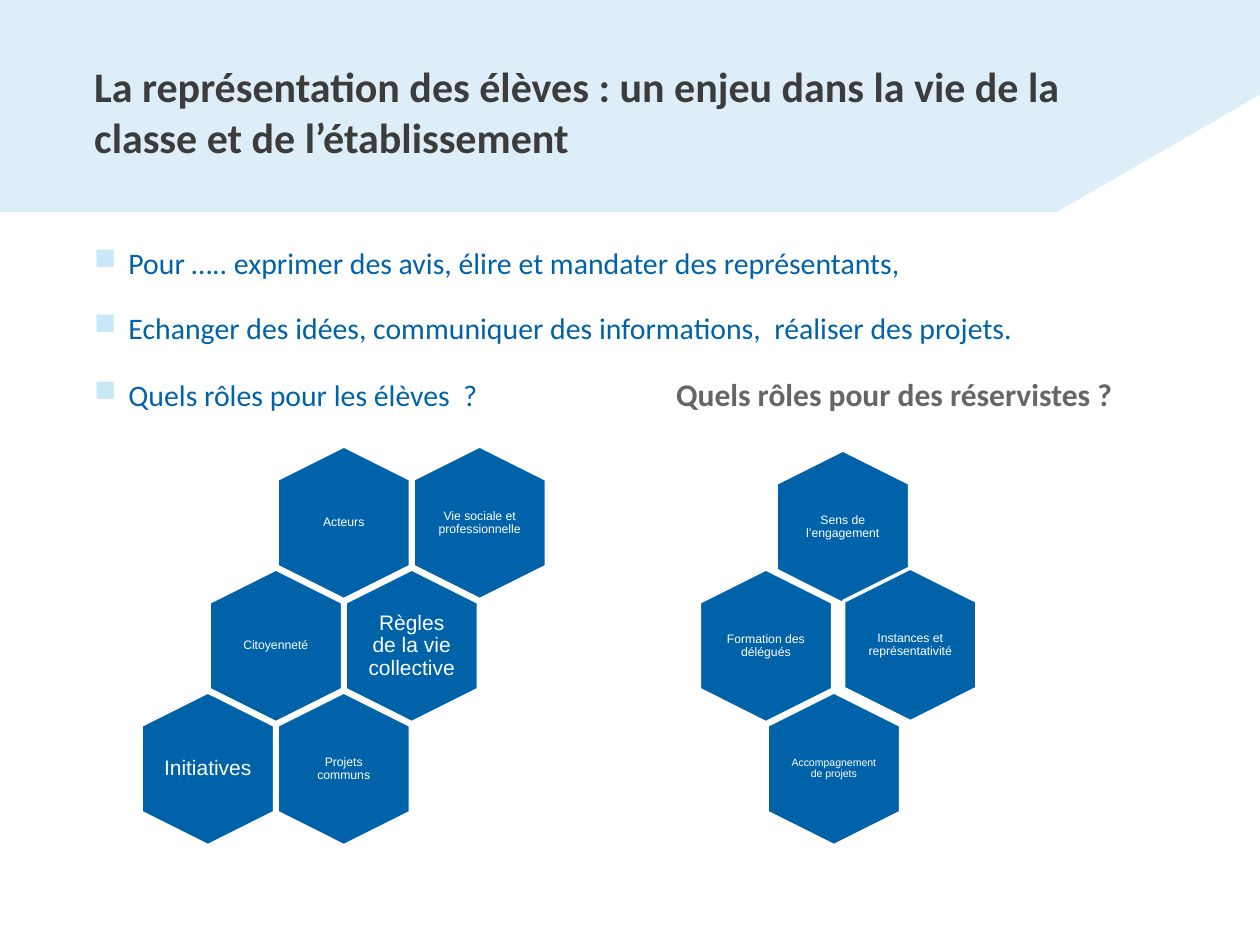
from lxml import etree
from pptx import Presentation
from pptx.dml.color import RGBColor
from pptx.enum import shapes, text
from pptx.oxml import ns
from pptx.util import Cm, Pt

PALE_BLUE = RGBColor(0xDE, 0xEE, 0xF8)
BULLET_BLUE = RGBColor(0xC9, 0xE8, 0xF7)
BLUE = RGBColor(0x00, 0x62, 0xA8)
WHITE = RGBColor(0xFF, 0xFF, 0xFF)
DARK_GREY = RGBColor(0x3C, 0x3C, 0x3C)
GREY = RGBColor(0x66, 0x66, 0x66)

HEX_LENGTH, HEX_BREADTH = 3.1, 2.69
LABEL_WIDTH, LABEL_HEIGHT = 1.77, 2.13
COLUMN_STEP, ROW_STEP = 2.74, 2.48
FIRST_X, FIRST_Y = 4.19, 10.54

STUDENT_ROLES = [
    (1, 0, "Acteurs", 7),
    (2, 0, "Vie sociale et professionnelle", 7),
    (0.5, 1, "Citoyenneté", 7),
    (1.5, 1, "Règles de la vie collective", 12),
    (1, 2, "Projets communs", 7),
    (0, 2, "Initiatives", 12),
]
RESERVIST_ROLES = [
    (15.44, 13.02, "Formation des délégués", 7),
    (16.81, 15.5, "Accompagnement de projets", 6),
    (16.99, 10.62, "Sens de l’engagement", 7),
    (18.35, 13, "Instances et représentativité", 7),
]
POINTS = [
    "Pour ….. exprimer des avis, élire et mandater des représentants,",
    "Echanger des idées, communiquer des informations,  réaliser des projets.",
    "Quels rôles pour les élèves  ?",
]


def add_banner(slide):
    corners = [(25.4, 0), (0, 0), (0, 4.27), (21.31, 4.27), (25.4, 1.91)]
    start, *others = [(Cm(x), Cm(y)) for x, y in corners]
    outline = slide.shapes.build_freeform(*start)
    outline.add_line_segments(others, close=True)
    banner = outline.convert_to_shape()
    banner.shadow.inherit = False
    banner.fill.solid()
    banner.fill.fore_color.rgb = PALE_BLUE
    banner.line.fill.background()


def add_text_frame(slide, left, top, width, height, anchor):
    frame = slide.shapes.add_textbox(Cm(left), Cm(top), Cm(width), Cm(height)).text_frame
    frame.word_wrap = True
    frame.vertical_anchor = anchor
    frame.margin_left = frame.margin_right = frame.margin_top = frame.margin_bottom = 0
    return frame


def format_font(font, name, size, colour, bold=False):
    font.name = name
    font.size = Pt(size)
    font.color.rgb = colour
    font.bold = bold


def add_title(slide):
    title = add_text_frame(slide, 1.9, 0.36, 21.6, 3.76, text.MSO_ANCHOR.MIDDLE)
    title.text = "La représentation des élèves : un enjeu dans la vie de la classe et de l’établissement"
    format_font(title.paragraphs[0].runs[0].font, "Calibri", 24, DARK_GREY, True)


def add_hexagon(slide, x, y, role, size):
    hexagon = slide.shapes.add_shape(
        shapes.MSO_SHAPE.HEXAGON, Cm(x - HEX_LENGTH / 2), Cm(y - HEX_BREADTH / 2),
        Cm(HEX_LENGTH), Cm(HEX_BREADTH))
    hexagon.rotation = 90
    hexagon.shadow.inherit = False
    hexagon.fill.solid()
    hexagon.fill.fore_color.rgb = BLUE
    hexagon.line.color.rgb = WHITE
    hexagon.line.width = Pt(2)

    label = add_text_frame(slide, x - LABEL_WIDTH / 2, y - LABEL_HEIGHT / 2,
                           LABEL_WIDTH, LABEL_HEIGHT, text.MSO_ANCHOR.MIDDLE)
    label.text = role
    paragraph = label.paragraphs[0]
    paragraph.alignment = text.PP_ALIGN.CENTER
    paragraph.line_spacing = 0.9
    format_font(paragraph.runs[0].font, "Arial", size, WHITE)


def add_bullet(paragraph):
    properties = paragraph._p.get_or_add_pPr()
    properties.set("marL", str(Cm(0.69)))
    properties.set("indent", str(-Cm(0.69)))
    colour = etree.SubElement(properties, ns.qn("a:buClr"))
    etree.SubElement(colour, ns.qn("a:srgbClr"), val=str(BULLET_BLUE))
    etree.SubElement(properties, ns.qn("a:buChar"), char="■")


def add_tab_stop(paragraph, position):
    tabs = etree.SubElement(paragraph._p.get_or_add_pPr(), ns.qn("a:tabLst"))
    etree.SubElement(tabs, ns.qn("a:tab"), pos=str(Cm(position)), algn="l")


def add_points(slide):
    body = add_text_frame(slide, 1.9, 4.93, 21.6, 11.81, text.MSO_ANCHOR.TOP)
    body.text = "\n".join(POINTS)
    for paragraph in body.paragraphs:
        add_bullet(paragraph)
        paragraph.space_after = Pt(17)
        format_font(paragraph.runs[0].font, "Calibri", 17, BLUE)

    roles = body.paragraphs[-1]
    add_tab_stop(roles, 11.73)
    reservists = roles.add_run()
    reservists.text = "\tQuels rôles pour des réservistes ?"
    format_font(reservists.font, "Calibri", 18, GREY, True)


def main():
    deck = Presentation()
    deck.slide_width, deck.slide_height = Cm(25.4), Cm(19.05)
    slide = deck.slides.add_slide(deck.slide_layouts[6])
    add_banner(slide)
    add_title(slide)
    for column, row, role, size in STUDENT_ROLES:
        add_hexagon(slide, FIRST_X + column * COLUMN_STEP, FIRST_Y + row * ROW_STEP, role, size)
    for x, y, role, size in RESERVIST_ROLES:
        add_hexagon(slide, x, y, role, size)
    add_points(slide)
    deck.save("out.pptx")


if __name__ == "__main__":
    main()
